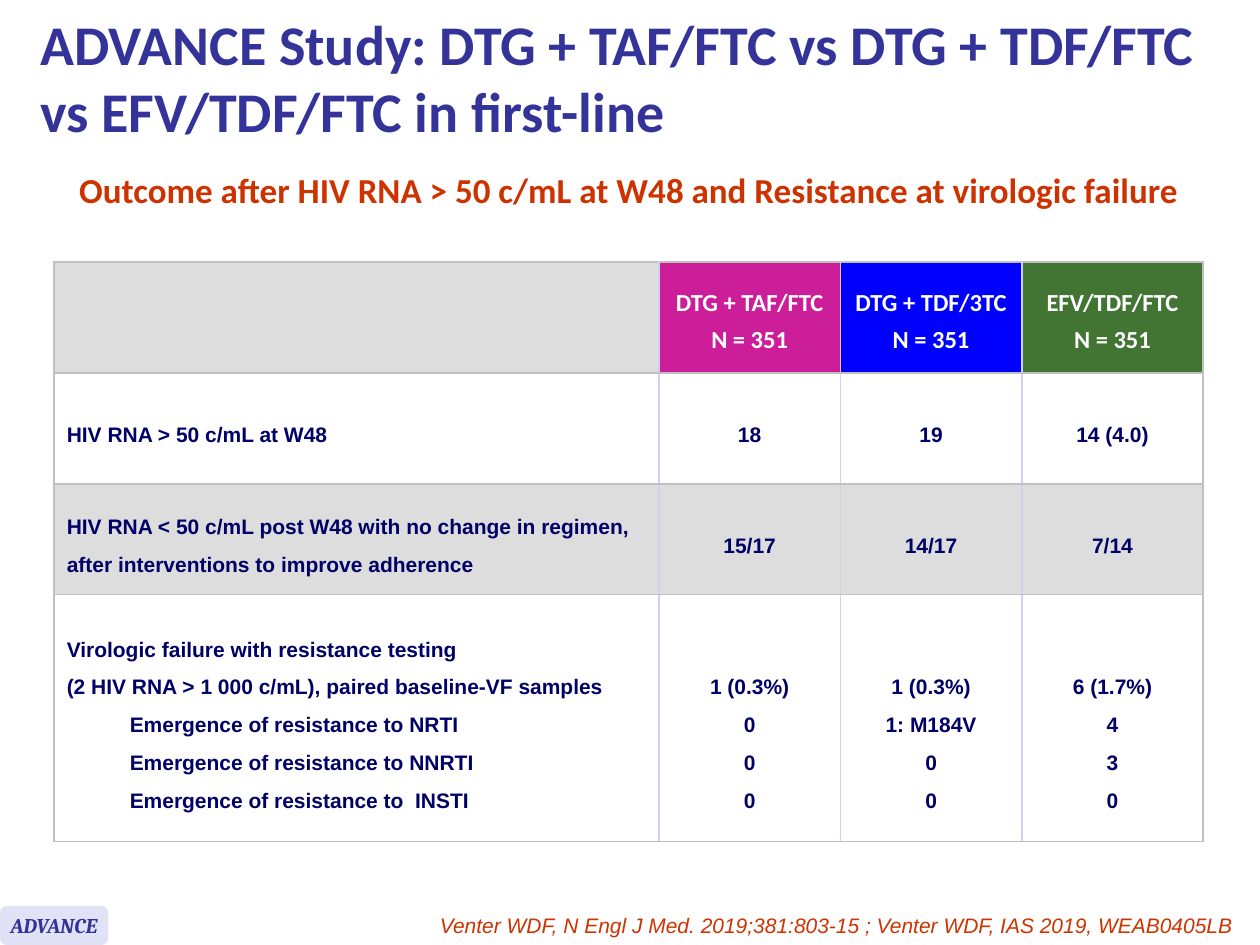
from lxml.etree import SubElement
from pptx import Presentation
from pptx.dml.color import RGBColor
from pptx.enum.shapes import MSO_SHAPE
from pptx.enum.text import MSO_ANCHOR, PP_ALIGN
from pptx.oxml.ns import qn
from pptx.util import Inches, Pt

WHITE = RGBColor(0xFF, 0xFF, 0xFF)
GREY = RGBColor(0xDD, 0xDD, 0xDD)
NAVY = RGBColor(0x00, 0x00, 0x66)
INDIGO = RGBColor(0x33, 0x33, 0x99)
LAVENDER = RGBColor(0xE2, 0xE2, 0xF6)
RUST = RGBColor(0xCC, 0x33, 0x00)
MAGENTA = RGBColor(0xCC, 0x1E, 0x99)
BLUE = RGBColor(0x00, 0x00, 0xFF)
GREEN = RGBColor(0x42, 0x75, 0x34)
OUTER_LINE = RGBColor(0xC0, 0xC0, 0xC0)
INNER_LINE = RGBColor(0xD0, 0xD0, 0xF0)

ARMS = [("DTG + TAF/FTC", MAGENTA), ("DTG + TDF/3TC", BLUE), ("EFV/TDF/FTC", GREEN)]
FAILURE_LABEL = [
    "Virologic failure with resistance testing \n"
    "(2 HIV RNA > 1 000 c/mL), paired baseline-VF samples",
    "Emergence of resistance to NRTI",
    "Emergence of resistance to NNRTI",
    "Emergence of resistance to  INSTI",
]
OUTCOMES = [
    (["HIV RNA > 50 c/mL at W48"], [["18"], ["19"], ["14 (4.0)"]], WHITE),
    (
        ["HIV RNA < 50 c/mL post W48 with no change in regimen, "
         "after interventions to improve adherence"],
        [["15/17"], ["14/17"], ["7/14"]],
        GREY,
    ),
    (
        FAILURE_LABEL,
        [
            ["1 (0.3%)", "0", "0", "0"],
            ["1 (0.3%)", "1: M184V", "0", "0"],
            ["6 (1.7%)", "4", "3", "0"],
        ],
        WHITE,
    ),
]


class SlideBuilder:
    line_pitch = Pt(21.6)

    def __init__(self, page):
        self.page = page

    def style(self, para, name, size, color, bold=True, italic=False, align=PP_ALIGN.LEFT):
        para.alignment = align
        font = para.font
        font.name, font.size = name, Pt(size)
        font.bold, font.italic = bold, italic
        font.color.rgb = color

    def text(self, place, words, anchor=MSO_ANCHOR.TOP, wrap=True, right=0.1, **look):
        box = self.page.shapes.add_textbox(*map(Inches, place))
        frame = box.text_frame
        frame.word_wrap = wrap
        frame.vertical_anchor = anchor
        frame.margin_right = Inches(right)
        para = frame.paragraphs[0]
        para.text = words
        self.style(para, **look)

    def badge(self, place, words, fill, **look):
        shape = self.page.shapes.add_shape(MSO_SHAPE.ROUNDED_RECTANGLE, *map(Inches, place))
        shape.shadow.inherit = False
        shape.fill.solid()
        shape.fill.fore_color.rgb = fill
        shape.line.fill.background()
        frame = shape.text_frame
        frame.word_wrap = False
        frame.vertical_anchor = MSO_ANCHOR.MIDDLE
        para = frame.paragraphs[0]
        para.text = words
        self.style(para, align=PP_ALIGN.CENTER, **look)

    def table(self, place, widths, heights):
        frame = self.page.shapes.add_table(len(heights), len(widths), *map(Inches, place))
        table = frame.table
        table.first_row = table.horz_banding = False
        for column, width in zip(table.columns, widths):
            column.width = Inches(width)
        for row, height in zip(table.rows, heights):
            row.height = Inches(height)
        return table

    def borders(self, cell, first, last):
        sides = {
            "a:lnL": OUTER_LINE if first else INNER_LINE,
            "a:lnR": OUTER_LINE if last else INNER_LINE,
            "a:lnT": OUTER_LINE,
            "a:lnB": OUTER_LINE,
        }
        properties = cell._tc.get_or_add_tcPr()
        for side, color in sides.items():
            line = SubElement(properties, qn(side), w=str(Pt(1)))
            fill = SubElement(line, qn("a:solidFill"))
            SubElement(fill, qn("a:srgbClr"), val=str(color))

    def cell(self, table, row, column, lines, fill, **look):
        cell = table.cell(row, column)
        self.borders(cell, column == 0, column == len(table.columns) - 1)
        cell.fill.solid()
        cell.fill.fore_color.rgb = fill
        cell.vertical_anchor = MSO_ANCHOR.MIDDLE
        frame = cell.text_frame
        for index, words in enumerate(lines):
            para = frame.add_paragraph() if index else frame.paragraphs[0]
            para.text = words
            para.line_spacing = self.line_pitch
            if index and column == 0:
                para.level = 1
                para._p.get_or_add_pPr().set("marL", str(Inches(0.5)))
            self.style(para, **look)
        return cell


def main():
    deck = Presentation()
    deck.slide_width, deck.slide_height = Inches(10), Inches(7.5)
    builder = SlideBuilder(deck.slides.add_slide(deck.slide_layouts[6]))

    table = builder.table((0.43, 2.08, 9.13, 4.59), [4.8] + [1.44] * 3, [0.88] * 3 + [1.96])
    heading = dict(name="Calibri", size=14, color=WHITE, align=PP_ALIGN.CENTER)
    body = dict(name="Arial", size=12, color=NAVY)
    builder.cell(table, 0, 0, [], GREY)
    for column, (arm, color) in enumerate(ARMS, 1):
        builder.cell(table, 0, column, [arm, "N = 351"], color, **heading)
    for row, (label, results, fill) in enumerate(OUTCOMES, 1):
        builder.cell(table, row, 0, label, fill, **body)
        for column, lines in enumerate(results, 1):
            cell = builder.cell(table, row, column, lines, fill, align=PP_ALIGN.CENTER, **body)
            if label is FAILURE_LABEL:
                cell.margin_top = Inches(0.05) + builder.line_pitch

    builder.badge((0, 7.19, 0.86, 0.31), "ADVANCE", LAVENDER,
                  name="Cambria", size=12, color=INDIGO, italic=True)
    builder.text((0.22, 0, 9.78, 1.21),
                 "ADVANCE Study: DTG + TAF/FTC vs DTG + TDF/FTC vs EFV/TDF/FTC in first-line",
                 anchor=MSO_ANCHOR.MIDDLE, name="Calibri", size=32, color=INDIGO)
    builder.text((1.29, 7.19, 8.69, 0.3),
                 "Venter WDF, N Engl J Med. 2019;381:803-15 ; Venter WDF, IAS 2019, WEAB0405LB",
                 right=0.19, name="Arial", size=12, color=RUST,
                 bold=False, italic=True, align=PP_ALIGN.RIGHT)
    builder.text((0.53, 1.29, 8.98, 0.44),
                 "Outcome after HIV RNA > 50 c/mL at W48 and Resistance at virologic failure",
                 wrap=False, name="Calibri", size=20, color=RUST)
    deck.save("out.pptx")


if __name__ == "__main__":
    main()
